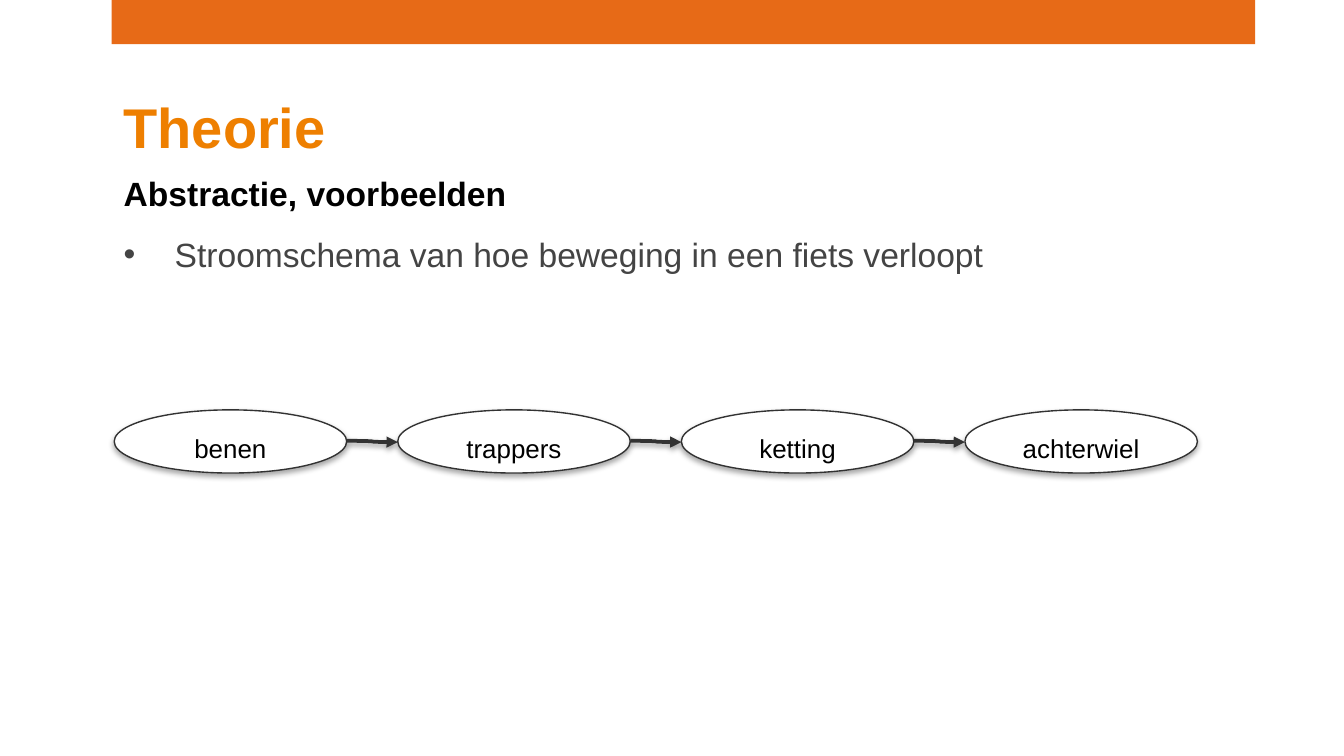
"""Build the theory slide with a flow chart of motion through a bicycle."""
from dataclasses import dataclass

from lxml import etree
from pptx import Presentation, util as u
from pptx.dml.color import RGBColor
from pptx.enum import shapes, text
from pptx.oxml.ns import qn

WIDTH = u.Inches(10)
HEIGHT = WIDTH * 9 // 16
ORANGE_BAR = RGBColor(0xE7, 0x6A, 0x17)
ORANGE_TITLE = RGBColor(0xEE, 0x7F, 0x00)
GREY_TEXT = RGBColor(0x44, 0x44, 0x44)
OUTLINE = RGBColor(0x32, 0x32, 0x32)
ARROW = RGBColor(0x33, 0x33, 0x33)
BLACK = RGBColor(0, 0, 0)
WHITE = RGBColor(0xFF, 0xFF, 0xFF)

FIRST_LEFT, PITCH = 0.85, 2.11
STEP_TOP, STEP_WIDTH, STEP_HEIGHT = 3.05, 1.73, 0.47
LABEL_TOP, LABEL_HEIGHT = 3.04, 0.37
ARROW_START, ARROW_END = 3.28, 3.29


@dataclass(frozen=True)
class Step:
    """One stage of the flow: its column, wording and label width."""
    column: int
    label: str
    label_width: float

    @property
    def left(self) -> float:
        """Left edge of the stage in inches."""
        return FIRST_LEFT + self.column * PITCH


STEPS = [
    Step(0, "benen", 0.94),
    Step(1, "trappers", 1.23),
    Step(2, "ketting", 0.94),
    Step(3, "achterwiel", 1.36),
]


def place(left: float, top: float, width: float, height: float) -> list:
    """Turn a box in inches into slide lengths."""
    return [u.Inches(value) for value in (left, top, width, height)]


def write(frame, wording: str, *, size: float, color: RGBColor, bold=False,
          align=text.PP_ALIGN.LEFT, anchor=text.MSO_ANCHOR.TOP,
          grow=False, bullet="", baseline=0) -> None:
    """Put one formatted paragraph into a text frame."""
    frame.word_wrap = True
    frame.vertical_anchor = anchor
    frame.auto_size = (text.MSO_AUTO_SIZE.SHAPE_TO_FIT_TEXT if grow
                       else text.MSO_AUTO_SIZE.NONE)
    paragraph = frame.paragraphs[0]
    paragraph.alignment = align
    paragraph.space_before = u.Pt(0)
    if bullet:
        properties = paragraph._p.get_or_add_pPr()
        properties.set("marL", str(u.Inches(0.38)))
        properties.set("indent", str(-u.Inches(0.38)))
        etree.SubElement(properties, qn("a:buChar"), char=bullet)
    run = paragraph.add_run()
    run.text = wording
    font = run.font
    font.name, font.size, font.bold = "Arial", u.Pt(size), bold
    font.color.rgb = color
    if baseline:
        run._r.get_or_add_rPr().set("baseline", str(baseline * 1000))


def fill_placeholder(placeholder, box: list, wording: str, **style) -> None:
    """Move a template placeholder and write its text."""
    placeholder.left, placeholder.top, placeholder.width, placeholder.height = box
    write(placeholder.text_frame, wording, **style)


def add_shadow(properties, opacity: int, distance: float) -> None:
    """Give shape properties a soft shadow that falls straight down."""
    effects = properties.find(qn("a:effectLst"))
    if effects is None:
        effects = etree.SubElement(properties, qn("a:effectLst"))
    shadow = etree.SubElement(
        effects, qn("a:outerShdw"), blurRad=str(u.Pt(3.1)),
        dist=str(u.Pt(distance)), dir="5400000", rotWithShape="0")
    color = etree.SubElement(shadow, qn("a:srgbClr"), val=str(BLACK))
    etree.SubElement(color, qn("a:alpha"), val=str(opacity * 1000))


def draw_bar(slide) -> None:
    """Draw the band along the top edge."""
    bar = slide.shapes.add_shape(shapes.MSO_SHAPE.RECTANGLE,
                                 *place(0.83, 0, 8.51, 0.33))
    bar.shadow.inherit = False
    bar.fill.solid()
    bar.fill.fore_color.rgb = ORANGE_BAR
    bar.line.fill.background()


def draw_step(slide, step: Step) -> None:
    """Draw the ellipse of one stage."""
    ellipse = slide.shapes.add_shape(
        shapes.MSO_SHAPE.OVAL,
        *place(step.left, STEP_TOP, STEP_WIDTH, STEP_HEIGHT))
    ellipse.fill.solid()
    ellipse.fill.fore_color.rgb = WHITE
    ellipse.line.color.rgb = OUTLINE
    ellipse.line.width = u.Pt(0.75)
    ellipse.shadow.inherit = False
    add_shadow(ellipse._element.spPr, 35, 1.8)


def draw_arrow(slide, source: Step, target: Step) -> None:
    """Draw the curved arrow between neighbouring stages."""
    arrow = slide.shapes.add_connector(
        shapes.MSO_CONNECTOR.CURVE,
        u.Inches(source.left + STEP_WIDTH), u.Inches(ARROW_START),
        u.Inches(target.left), u.Inches(ARROW_END))
    arrow.line.color.rgb = ARROW
    arrow.line.width = u.Pt(2)
    etree.SubElement(arrow.line._get_or_add_ln(), qn("a:tailEnd"), type="triangle")
    add_shadow(arrow._element.spPr, 38, 1.6)


def draw_label(slide, step: Step) -> None:
    """Centre the wording of one stage on its ellipse."""
    left = step.left + (STEP_WIDTH - step.label_width) / 2
    label = slide.shapes.add_textbox(
        *place(left, LABEL_TOP, step.label_width, LABEL_HEIGHT))
    frame = label.text_frame
    frame.margin_left = frame.margin_right = 0
    frame.margin_top = frame.margin_bottom = 0
    write(frame, step.label, size=24, color=BLACK, baseline=-25, grow=True,
          align=text.PP_ALIGN.CENTER, anchor=text.MSO_ANCHOR.MIDDLE)


def main() -> None:
    """Build and save the slide."""
    deck = Presentation()
    deck.slide_width, deck.slide_height = WIDTH, HEIGHT
    slide = deck.slides.add_slide(deck.slide_layouts[7])
    draw_bar(slide)
    title, body, subtitle = slide.placeholders
    fill_placeholder(title, place(0.82, 0.71, 8.52, 0.53), "Theorie", size=30,
                     color=ORANGE_TITLE, bold=True, anchor=text.MSO_ANCHOR.BOTTOM)
    fill_placeholder(body, place(0.82, 1.69, 8.59, 3.37),
                     "Stroomschema van hoe beweging in een fiets verloopt",
                     size=18, color=GREY_TEXT, bullet="•")
    fill_placeholder(subtitle, place(0.82, 1.24, 8.52, 0.3),
                     "Abstractie, voorbeelden", size=18, color=BLACK, bold=True)
    for step in STEPS:
        draw_step(slide, step)
    for source, target in zip(STEPS, STEPS[1:]):
        draw_arrow(slide, source, target)
    for step in STEPS:
        draw_label(slide, step)
    deck.save("out.pptx")


if __name__ == "__main__":
    main()
